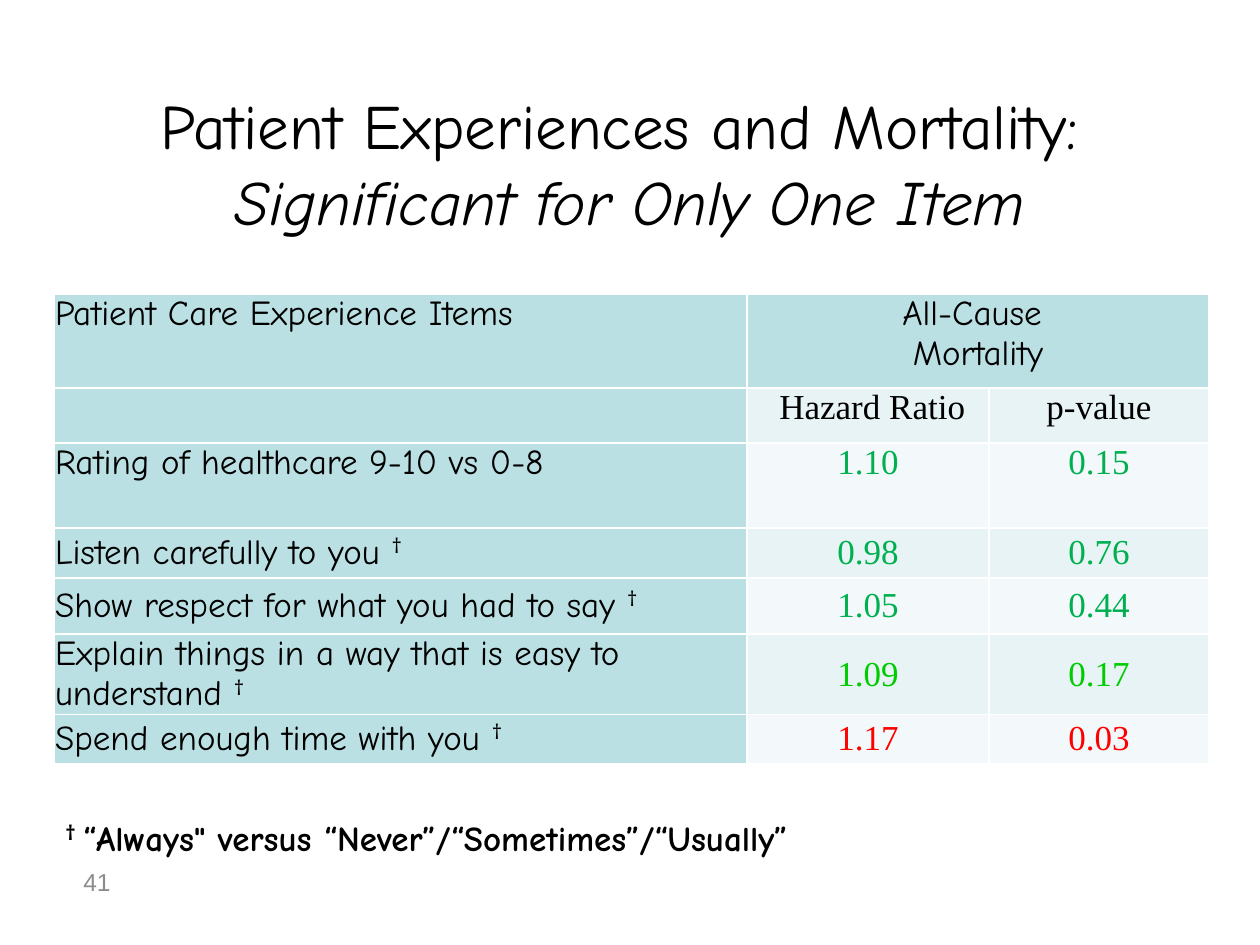
from pptx import Presentation
from pptx.dml.color import RGBColor
from pptx.enum.text import MSO_ANCHOR as Anchor, MSO_AUTO_SIZE as AutoSize, PP_ALIGN as Align
from pptx.oxml import parse_xml
from pptx.oxml.ns import nsdecls
from pptx.util import Emu, Pt

PX = 914400 // 126
COMIC, TIMES = "Comic Neue", "Times New Roman"
BLACK, GREEN, LIME, RED = "000000", "00B050", "00CC00", "FF0000"
TEAL, PALE, PALER = "BBE0E3", "E7F3F4", "F3F9FA"


def color(value):
    return RGBColor.from_string(value)


def add_span(para, text, ink=BLACK, raised=False, **style):
    span = para.add_run()
    span.text = text
    for name, value in ({"name": COMIC, "size": Pt(20), "bold": False} | style).items():
        setattr(span.font, name, value)
    span.font.color.rgb = color(ink)
    if raised:
        span.font._element.set("baseline", "30000")


deck = Presentation()
deck.slide_width, deck.slide_height = Emu(1260 * PX), Emu(945 * PX)
page = deck.slides.add_slide(deck.slide_layouts[5])

# Title
title = page.shapes.title
title.left, title.top, title.width, title.height = [Emu(n * PX) for n in (0, 94, 1260, 136)]
title.text_frame.auto_size = AutoSize.NONE
title.text_frame.vertical_anchor = Anchor.MIDDLE
para = title.text_frame.paragraphs[0]
para.alignment = Align.CENTER
add_span(para, "Patient Experiences and Mortality: ", size=Pt(36))
para.add_line_break()
add_span(para, "Significant for Only One Item", size=Pt(36), italic=True)

# Table grid: label, hazard ratio, p-value, ink, row fill
rows = [
    ("Patient Care Experience Items", "All-Cause \nMortality", "", BLACK, TEAL),
    ("", " Hazard Ratio", "p-value", BLACK, PALE),
    ("Rating of healthcare 9-10 vs 0-8", "1.10", "0.15", GREEN, PALER),
    ("Listen carefully to you †", "0.98", "0.76", GREEN, PALE),
    ("Show respect for what you had to say †", "1.05", "0.44", GREEN, PALER),
    ("Explain things in a way that is easy to understand †", "1.09", "0.17", LIME, PALE),
    ("Spend enough time with you †", "1.17", "0.03", RED, PALER),
]
widths = [693, 242, 220]
heights = [94, 55, 85, 50, 56, 49, 49]
table = page.shapes.add_table(len(rows), len(widths), Emu(54 * PX), Emu(294 * PX),
                              Emu(sum(widths) * PX), Emu(sum(heights) * PX)).table
table.first_row = table.horz_banding = False
for column, width in zip(table.columns, widths):
    column.width = Emu(width * PX)
for row, height in zip(table.rows, heights):
    row.height = Emu(height * PX)
table.cell(0, 1).merge(table.cell(0, 2))

# Table cells
for r, (*texts, ink, fill) in enumerate(rows):
    for c, text in enumerate(texts):
        cell = table.cell(r, c)
        cell.margin_left = cell.margin_right = Emu(PX)
        cell.margin_top = cell.margin_bottom = 0
        cell.vertical_anchor = Anchor.MIDDLE if r > 2 else Anchor.TOP
        for side in ("lnL", "lnR", "lnT", "lnB"):
            cell._tc.get_or_add_tcPr().append(parse_xml(
                f'<a:{side} {nsdecls("a")} w="12700"><a:solidFill>'
                f'<a:srgbClr val="FFFFFF"/></a:solidFill></a:{side}>'))
        cell.fill.solid()
        cell.fill.fore_color.rgb = color(fill if c else TEAL)
        if not text:
            continue
        for n, line in enumerate(text.split("\n")):
            para = cell.text_frame.add_paragraph() if n else cell.text_frame.paragraphs[0]
            para.alignment = Align.CENTER if c else Align.LEFT
            add_span(para, line.removesuffix("†"), ink if c else BLACK,
                     name=TIMES if c and r else COMIC)
            if line.endswith("†"):
                add_span(para, "†", raised=True)

# Footnote and page number
notes = [
    ((53, 810, 1134, 55), [("† ", {"raised": True, "bold": True}),
                           ("“Always\" versus “Never”/“Sometimes”/“Usually”", {"bold": True})]),
    ((71, 861, 330, 66), [("41", {"ink": "8C8C8C", "name": "Arial", "size": Pt(14)})]),
]
for place, spans in notes:
    box = page.shapes.add_textbox(*[Emu(n * PX) for n in place])
    box.text_frame.word_wrap = True
    for text, style in spans:
        add_span(box.text_frame.paragraphs[0], text, **style)

deck.save("out.pptx")
